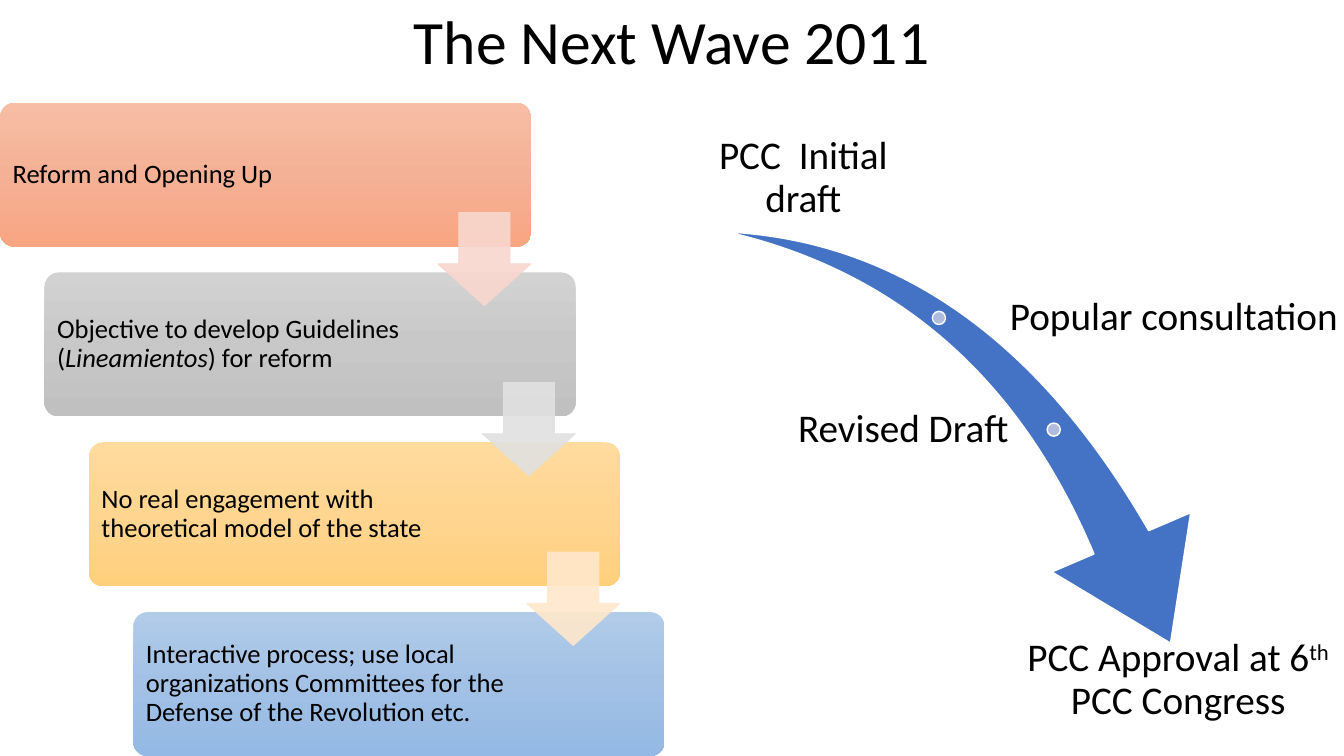
from copy import deepcopy
from dataclasses import dataclass

from lxml import etree
from pptx import Presentation
from pptx import util as u
from pptx.dml.color import RGBColor
from pptx.enum import shapes, text
from pptx.oxml import ns


@dataclass
class Theme:
    font: str = "Calibri"
    ink: str = "000000"
    white: str = "FFFFFF"
    swoosh: str = "4472C4"
    dot: str = "B0BCDE"
    title_size: float = 44
    step_size: float = 19
    stage_size: float = 28
    bars: tuple = (
        ("F7BDA5", "F5B196", "F8A582"),
        ("D2D2D2", "C8C8C8", "C0C0C0"),
        ("FFDB9E", "FFD590", "FFD07C"),
        ("B1CBE9", "A3C1E5", "93B9E4"),
    )
    arrows: tuple = ("F8D7CE", "E1E1E1", "FFE8CC")


theme = Theme()
align = text.PP_ALIGN
anchor = text.MSO_ANCHOR
kind = shapes.MSO_SHAPE

presentation = Presentation()
presentation.slide_width = u.Pt(960)
presentation.slide_height = u.Pt(540)
slide = presentation.slides.add_slide(presentation.slide_layouts[6])


def write_text(shape, runs, size, alignment, vertical, margins):
    frame = shape.text_frame
    left, top, right, bottom = margins
    frame_format = {
        "word_wrap": True, "vertical_anchor": vertical,
        "margin_left": u.Pt(left), "margin_top": u.Pt(top),
        "margin_right": u.Pt(right), "margin_bottom": u.Pt(bottom),
    }
    for name, value in frame_format.items():
        setattr(frame, name, value)
    paragraph = frame.paragraphs[0]
    paragraph.alignment = alignment
    paragraph.line_spacing = 0.9
    for wording, style in runs:
        run = paragraph.add_run()
        run.text = wording
        run.font.color.rgb = RGBColor.from_string(theme.ink)
        run_format = {"name": theme.font, "size": u.Pt(size), "italic": style == "italic"}
        for name, value in run_format.items():
            setattr(run.font, name, value)
        if style == "superscript":
            run.font._element.set("baseline", "30000")


def draw_shape(preset, box, fill, line=None, width=1, adjustments=()):
    shape = slide.shapes.add_shape(preset, *map(u.Pt, box))
    shape.shadow.inherit = False
    for index, value in enumerate(adjustments):
        shape.adjustments[index] = value
    if isinstance(fill, tuple):
        shape.fill.gradient()
        shape.fill.gradient_angle = 270
        stop_list = shape._element.spPr.find(".//" + ns.qn("a:gsLst"))
        stop_list.insert(1, deepcopy(stop_list[0]))
        for stop, position, color in zip(shape.fill.gradient_stops, (0, 0.5, 1), fill):
            stop.position = position
            stop.color.rgb = RGBColor.from_string(color)
    else:
        shape.fill.solid()
        shape.fill.fore_color.rgb = RGBColor.from_string(fill)
    if line:
        shape.line.color.rgb = RGBColor.from_string(line)
        shape.line.width = u.Pt(width)
    else:
        shape.line.fill.background()
    return shape


title = slide.shapes.add_textbox(*map(u.Pt, (66, 0, 828, 63)))
write_text(title, [("The Next Wave 2011", None)], theme.title_size,
           align.CENTER, anchor.MIDDLE, (7.2, 3.6, 7.2, 3.6))

steps = [
    [("Reform and Opening Up", None)],
    [("Objective to develop Guidelines (", None), ("Lineamientos", "italic"),
     (") for reform", None)],
    [("No real engagement with theoretical model of the state", None)],
    [("Interactive process; use local organizations Committees for the "
      "Defense of the Revolution etc.", None)],
]
step_right, step_down = 31.75, 121.3

for index, (runs, colors) in enumerate(zip(steps, theme.bars)):
    box = (index * step_right, 73.3 + index * step_down, 379.5, 102.8)
    bar = draw_shape(kind.ROUNDED_RECTANGLE, box, colors, adjustments=(0.1,))
    write_text(bar, runs, theme.step_size, align.LEFT, anchor.MIDDLE, (6, 3, 104.5, 3))

for index, color in enumerate(theme.arrows):
    box = (312.6 + index * step_right, 151.7 + index * step_down, 66.8, 66.8)
    arrow = draw_shape(kind.DOWN_ARROW, box, color, color, 0.5, (0.55, 0.45))
    for color_element in arrow._element.spPr.iter(ns.qn("a:srgbClr")):
        etree.SubElement(color_element, ns.qn("a:alpha")).set("val", "90000")

swoosh = draw_shape(kind.SWOOSH_ARROW, (511.2, 177.1, 372.2, 259.2), theme.swoosh,
                    theme.white, adjustments=(0.163, 0.314))
swoosh.rotation = 73.3

for left, top in ((666, 222.4), (748, 302.2)):
    draw_shape(kind.OVAL, (left, top, 9.4, 9.4), theme.dot, theme.white)

stages = [
    ((486, 91.5, 175.7, 69), align.CENTER, anchor.BOTTOM, [("PCC  Initial draft", None)]),
    ((718.6, 192.5, 241.4, 69), align.LEFT, anchor.MIDDLE, [("Popular consultation", None)]),
    ((486, 272.3, 237, 69), align.RIGHT, anchor.MIDDLE, [("Revised Draft", None)]),
    ((723, 453, 237, 69), align.CENTER, anchor.TOP,
     [("PCC Approval at 6", None), ("th", "superscript"), (" PCC Congress", None)]),
]
for box, alignment, vertical, runs in stages:
    label = slide.shapes.add_textbox(*map(u.Pt, box))
    write_text(label, runs, theme.stage_size, alignment, vertical, (2.8, 2.8, 2.8, 2.8))

presentation.save("out.pptx")
